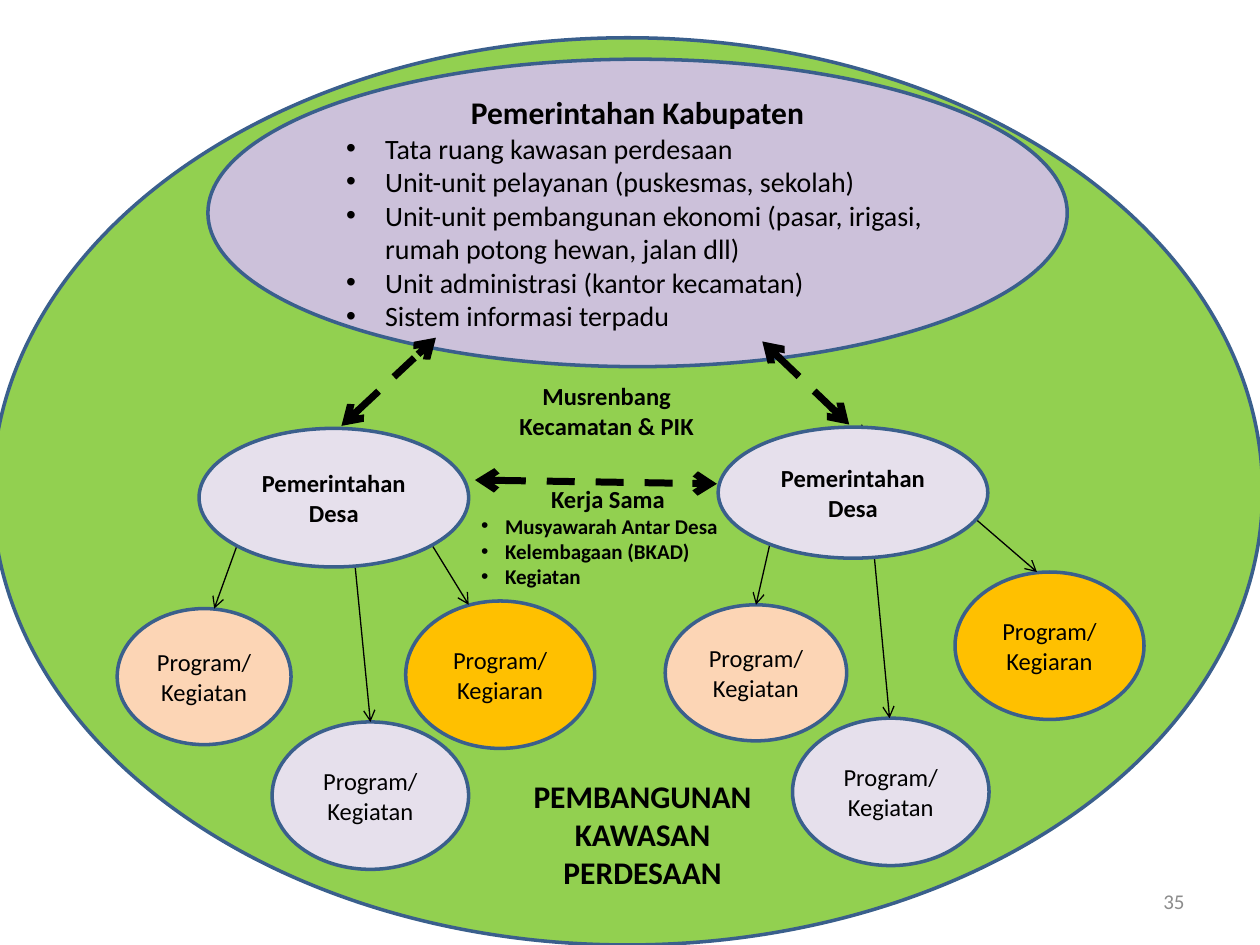
from lxml.etree import SubElement
from pptx import Presentation
from pptx.dml.color import RGBColor
from pptx.enum.dml import MSO_LINE
from pptx.enum.shapes import MSO_CONNECTOR, MSO_SHAPE
from pptx.enum.text import MSO_ANCHOR, PP_ALIGN
from pptx.oxml import parse_xml
from pptx.oxml.ns import nsdecls, qn
from pptx.util import Inches, Pt


class Theme:
    font = "Calibri"
    black = RGBColor(0x00, 0x00, 0x00)
    gray = RGBColor(0x8C, 0x8C, 0x8C)
    outline = RGBColor(0x3A, 0x5F, 0x8C)
    green = RGBColor(0x92, 0xD0, 0x50)
    purple = RGBColor(0xCC, 0xC1, 0xDA)
    lavender = RGBColor(0xE6, 0xE0, 0xEC)
    peach = RGBColor(0xFC, 0xD5, 0xB5)
    amber = RGBColor(0xFF, 0xC0, 0x00)
    heading, list_text, body, small = Pt(18), Pt(16), Pt(14), Pt(12)
    border, thin, thick = Pt(2), Pt(0.75), Pt(4)


presentation = Presentation()
presentation.slide_width = Inches(10)
presentation.slide_height = Inches(7.5)
slide = presentation.slides.add_slide(presentation.slide_layouts[6])


def add_text_shape(box, title="", size=Theme.body, bold=False, fill=None, oval=True,
                   color=Theme.black, align=PP_ALIGN.CENTER,
                   bullets=(), bullet_size=None, bullet_bold=False, indent=0):
    """Add an oval or a text box with a title line and an optional bulleted list."""
    position = [Inches(length) for length in box]
    if oval:
        shape = slide.shapes.add_shape(MSO_SHAPE.OVAL, *position)
        shape.shadow.inherit = False
        if fill is None:
            shape.fill.background()
            shape.line.fill.background()
        else:
            shape.fill.solid()
            shape.fill.fore_color.rgb = fill
            shape.line.color.rgb = Theme.outline
            shape.line.width = Theme.border
    else:
        shape = slide.shapes.add_textbox(*position)
    frame = shape.text_frame
    frame.word_wrap = True
    frame.vertical_anchor = MSO_ANCHOR.MIDDLE
    frame.text = "\n".join([title, *bullets])
    for number, paragraph in enumerate(frame.paragraphs):
        is_bullet = number > 0
        paragraph.alignment = PP_ALIGN.LEFT if is_bullet else align
        if is_bullet:
            properties = paragraph._p.get_or_add_pPr()
            properties.set("marL", str(Inches(indent)))
            properties.set("indent", str(-Inches(indent)))
            SubElement(properties, qn("a:buFont"), typeface="Arial")
            SubElement(properties, qn("a:buChar"), char="•")
        for run in paragraph.runs:
            run.font.name = Theme.font
            run.font.size = bullet_size if is_bullet else size
            run.font.bold = bullet_bold if is_bullet else bold
            run.font.color.rgb = color
    return shape


def add_arrow(start, end, width, two_way=False):
    """Add a thin one-way arrow, or a dashed one with a head at both ends."""
    points = [Inches(length) for length in (*start, *end)]
    arrow = slide.shapes.add_connector(MSO_CONNECTOR.STRAIGHT, *points)
    arrow.line.color.rgb = Theme.black
    arrow.line.width = width
    if two_way:
        arrow.line.dash_style = MSO_LINE.DASH
    line = arrow.line._ln
    for tag in ("a:headEnd", "a:tailEnd") if two_way else ("a:tailEnd",):
        SubElement(line, qn(tag), type="arrow")
    SubElement(arrow._element.spPr, qn("a:effectLst"))


# Rural area and district government
add_text_shape((-0.06, 0.3, 10.08, 7.2), fill=Theme.green)
add_text_shape(
    (1.65, 0.47, 6.82, 2.44), "Pemerintahan Kabupaten", Theme.heading, True, Theme.purple,
    bullets=(
        "Tata ruang kawasan perdesaan",
        "Unit-unit pelayanan (puskesmas, sekolah)",
        "Unit-unit pembangunan ekonomi (pasar, irigasi, rumah potong hewan, jalan dll)",
        "Unit administrasi (kantor kecamatan)",
        "Sistem informasi terpadu",
    ),
    bullet_size=Theme.list_text, indent=0.31)

# Programs of the left village, then of the right one
programs = [
    ((2.16, 5.73, 1.56, 1.17), "Program/Kegiatan", Theme.lavender),
    ((0.93, 4.83, 1.38, 1.08), "Program/Kegiatan", Theme.peach),
    ((3.22, 4.77, 1.5, 1.17), "Program/ Kegiaran", Theme.amber),
    ((6.29, 5.7, 1.56, 1.17), "Program/Kegiatan", Theme.lavender),
    ((5.28, 4.8, 1.44, 1.08), "Program/Kegiatan", Theme.peach),
    ((7.58, 4.54, 1.5, 1.17), "Program/ Kegiaran", Theme.amber),
]
for box, title, fill in programs:
    add_text_shape(box, title, fill=fill)

program_arrows = [
    ((2.71, 3.39), (2.94, 5.73)),
    ((2.16, 3.56), (1.7, 4.83)),
    ((2.94, 3.53), (3.72, 4.8)),
    ((6.84, 3.37), (7.06, 5.7)),
    ((6.29, 3.53), (6, 4.8)),
    ((7.06, 3.53), (8.23, 4.54)),
]
for start, end in program_arrows:
    add_arrow(start, end, Theme.thin)

# Villages cover the starts of the program arrows
for box in ((1.58, 3.4, 2.14, 1.1), (5.7, 3.39, 2.14, 1.04)):
    add_text_shape(box, "Pemerintahan Desa", bold=True, fill=Theme.lavender)

cooperation_arrows = [
    ((3.77, 3.81), (5.69, 3.84)),
    ((6.05, 2.71), (6.74, 3.37)),
    ((2.71, 3.38), (3.46, 2.68)),
]
for start, end in cooperation_arrows:
    add_arrow(start, end, Theme.thick, two_way=True)

# Labels
add_text_shape((3.48, 2.83, 2.67, 0.86), "Musrenbang Kecamatan & PIK", bold=True)
add_text_shape((3.41, 5.94, 3.38, 1.36), "PEMBANGUNAN KAWASAN PERDESAAN", Theme.heading, True)
cooperation = add_text_shape(
    (3.72, 3.75, 2.21, 1.01), "Kerja Sama", bold=True, oval=False,
    bullets=("Musyawarah Antar Desa", "Kelembagaan (BKAD)", "Kegiatan"),
    bullet_size=Theme.small, bullet_bold=True, indent=0.19)
for paragraph in cooperation.text_frame.paragraphs:
    for run in paragraph.runs:
        text_shadow = parse_xml(
            f'<a:effectLst {nsdecls("a")}><a:outerShdw blurRad="38100" dist="38100" dir="2700000">'
            '<a:srgbClr val="000000"><a:alpha val="43000"/></a:srgbClr>'
            '</a:outerShdw></a:effectLst>')
        run._r.rPr.find(qn("a:solidFill")).addnext(text_shadow)
add_text_shape((7.17, 6.95, 2.33, 0.4), "35", Theme.small, oval=False,
               color=Theme.gray, align=PP_ALIGN.RIGHT)

presentation.save("out.pptx")
